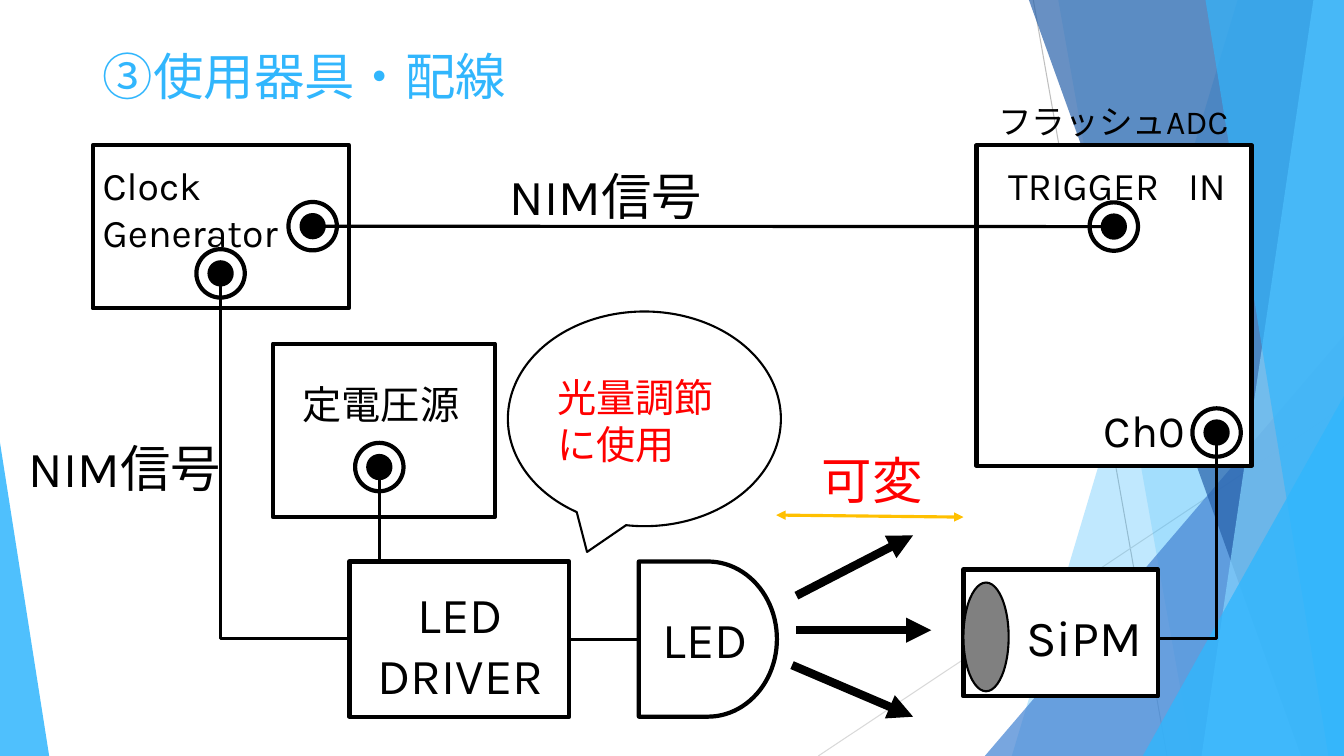
from dataclasses import dataclass

from lxml import etree
from pptx import Presentation
from pptx import util as u
from pptx.dml.color import RGBColor
from pptx.enum import lang, shapes, text
from pptx.oxml import ns


@dataclass(frozen=True)
class Theme:
    font: str = "Karla"
    ink: str = "000000"
    paper: str = "FFFFFF"
    accent: str = "31B6FD"
    sky: str = "83D3FE"
    blue: str = "4584D3"
    navy: str = "2862AA"
    alert: str = "FF0000"
    amber: str = "FFC000"
    grey: str = "808080"
    hairlines: tuple = ("BFBFBF", "D9D9D9")
    large: int = 36
    channel: int = 32
    medium: int = 28
    small: int = 24


@dataclass(frozen=True)
class Box:
    left: float
    top: float
    width: float
    height: float

    def point(self, x, y):
        return self.left + x, self.top + y

    def inside(self, x, y, width, height):
        return Box(*self.point(x, y), width, height)

    def lengths(self):
        return [u.Cm(value) for value in (self.left, self.top, self.width, self.height)]


theme = Theme()
preset = shapes.MSO_SHAPE
align = text.PP_ALIGN


def write(frame, words, size=theme.large, colour=theme.ink, alignment=align.LEFT, space=0):
    frame.word_wrap = True
    frame.auto_size = text.MSO_AUTO_SIZE.NONE
    frame.vertical_anchor = text.MSO_ANCHOR.TOP
    paragraph = frame.paragraphs[0]
    paragraph.alignment = alignment
    for part in words.partition(" ") if space else [words]:
        run = paragraph.add_run()
        run.text = part
        run.font.name = theme.font
        run.font.size = u.Pt(size)
        run.font.color.rgb = RGBColor.from_string(colour)
        run.font.language_id = lang.MSO_LANGUAGE_ID.JAPANESE
        properties = run.font._element
        etree.SubElement(properties, ns.qn("a:ea"), typeface=theme.font)
        if part == " ":
            properties.set("spc", str(space * 100))


def label(slide, box, words, **style):
    write(slide.shapes.add_textbox(*box.lengths()).text_frame, words, **style)


def paint(shape, fill=None, line=None, weight=3, opacity=100):
    shape.shadow.inherit = False
    if fill:
        shape.fill.solid()
        shape.fill.fore_color.rgb = RGBColor.from_string(fill)
        if opacity < 100:
            colour = shape._element.spPr.find(".//" + ns.qn("a:srgbClr"))
            etree.SubElement(colour, ns.qn("a:alpha"), val=str(opacity * 1000))
    else:
        shape.fill.background()
    if line:
        shape.line.color.rgb = RGBColor.from_string(line)
        shape.line.width = u.Pt(weight)
    else:
        shape.line.fill.background()
    return shape


def outline(slide, kind, box, fill=theme.paper, weight=3):
    return paint(slide.shapes.add_shape(kind, *box.lengths()), fill, theme.ink, weight)


def wire(slide, start, end, colour=theme.ink, weight=2.25, arrows=(), corner=False):
    kind = shapes.MSO_CONNECTOR.ELBOW if corner else shapes.MSO_CONNECTOR.STRAIGHT
    connector = slide.shapes.add_connector(kind, *[u.Cm(value) for value in (*start, *end)])
    connector.line.color.rgb = RGBColor.from_string(colour)
    connector.line.width = u.Pt(weight)
    properties = connector._element.spPr
    for arrow in arrows:
        etree.SubElement(connector.line._get_or_add_ln(), ns.qn("a:" + arrow), type="triangle")
    etree.SubElement(properties, ns.qn("a:effectLst"))
    if corner:
        guides = properties.find(".//" + ns.qn("a:avLst"))
        etree.SubElement(guides, ns.qn("a:gd"), name="adj1", fmla="val 0")
    return connector


def socket(slide, centre):
    for diameter, fill, weight in ((1.22, None, 3), (0.61, theme.ink, 1.5)):
        left, top = (value - diameter / 2 for value in centre)
        outline(slide, preset.OVAL, Box(left, top, diameter, diameter), fill, weight)
    return centre


def backdrop(slide, box):
    def facet(top, bottom, colour, opacity):
        x, y = box.point(0, 0)
        right, floor = u.Cm(x + box.width), u.Cm(y + box.height)
        builder = slide.shapes.build_freeform(u.Cm(x + top), u.Cm(y))
        builder.add_line_segments([(right, u.Cm(y)), (right, floor), (u.Cm(x + bottom), floor)])
        paint(builder.convert_to_shape(), colour, opacity=opacity)

    def triangle(left, width, height, peak, colour, opacity):
        place = box.inside(left, box.height - height, width, height)
        shape = slide.shapes.add_shape(preset.ISOSCELES_TRIANGLE, *place.lengths())
        shape.adjustments[0] = peak
        paint(shape, colour, opacity=opacity)

    rays = ((26.04, 0, 29.41, 19.05), (33.87, 10.24, 20.62, 19.05))
    for colour, (x1, y1, x2, y2) in zip(theme.hairlines, rays):
        wire(slide, box.point(x1, y1), box.point(x2, y2), colour, 0.75)
    facet(31.19, 25.5, theme.accent, 30)
    facet(26.67, 30.05, theme.accent, 20)
    triangle(24.82, 9.05, 10.59, 1, theme.blue, 72)
    facet(25.93, 32.79, theme.navy, 70)
    facet(33.1, 30.28, theme.sky, 70)
    facet(30.38, 33.48, theme.accent, 65)
    triangle(28.8, 5.07, 9.07, 1, theme.accent, 80)
    triangle(0, 1.24, 7.9, 0, theme.accent, 85)


def heading(slide, box):
    title = slide.shapes.title
    title.left, title.top, title.width, title.height = box.lengths()
    write(title.text_frame, "③使用器具・配線", colour=theme.accent)


def clock_generator(slide, box):
    outline(slide, preset.RECTANGLE, box)
    sockets = [socket(slide, box.point(*centre)) for centre in ((5.54, 2.04), (3.22, 3.23))]
    label(slide, box.inside(0, 0.28, 4.93, 2.64), "Clock Generator", size=theme.medium)
    return sockets


def flash_adc(slide, box):
    outline(slide, preset.RECTANGLE, box)
    sockets = [socket(slide, box.point(*centre)) for centre in ((3.46, 2.05), (6.05, 7.24))]
    label(slide, box.inside(0.43, 0.28, 6.22, 1.45), "TRIGGER IN",
          size=theme.medium, alignment=align.CENTER, space=14)
    label(slide, box.inside(2.7, 6.37, 3.05, 1.63), "Ch0",
          size=theme.channel, alignment=align.CENTER)
    label(slide, box.inside(0.18, -1.25, 6.53, 1.27), "フラッシュADC",
          size=theme.small, alignment=align.CENTER)
    return sockets


def power_supply(slide, box):
    outline(slide, preset.RECTANGLE, box)
    label(slide, box.inside(0.28, 0.79, 4.88, 1.45), "定電圧源",
          size=theme.medium, alignment=align.CENTER)
    return socket(slide, box.point(2.68, 3.11))


def led_driver(slide, box):
    shape = outline(slide, preset.RECTANGLE, box)
    label(slide, box.inside(0.28, 0.43, 5.03, 3.33), "LED DRIVER", alignment=align.CENTER)
    return shape


def led(slide, box):
    shape = outline(slide, preset.FLOWCHART_DELAY, box)
    label(slide, box.inside(0.16, 1.04, 3.02, 1.8), "LED", alignment=align.CENTER)
    rays = ((3.97, 0.86, 6.91, -0.66), (3.97, 1.73, 7.37, 1.73), (3.86, 2.61, 6.91, 3.91))
    for x1, y1, x2, y2 in rays:
        wire(slide, box.point(x1, y1), box.point(x2, y2), weight=6, arrows=["tailEnd"])
    return shape


def photosensor(slide, box):
    outline(slide, preset.RECTANGLE, box)
    outline(slide, preset.OVAL, box.inside(0, 0.33, 1.14, 2.74), theme.grey, 1.5)
    label(slide, box.inside(1.17, 0.81, 3.76, 1.8), "SiPM", alignment=align.CENTER)


def brightness_note(slide, box):
    callout = outline(slide, preset.OVAL_CALLOUT, box, weight=1.5)
    callout.adjustments[0], callout.adjustments[1] = -0.21, 0.62
    label(slide, box.inside(0.99, 1.42, 5.31, 2.64), "光量調節に使用",
          size=theme.medium, colour=theme.alert)


def variable_distance(slide, box):
    wire(slide, box.point(0, 1.78), box.point(box.width, 1.83), theme.amber,
         arrows=["headEnd", "tailEnd"])
    label(slide, box.inside(0.4, 0, 4.04, 1.8), "可変",
          colour=theme.alert, alignment=align.CENTER)


def wiring_slide(presentation, box):
    slide = presentation.slides.add_slide(presentation.slide_layouts[5])
    backdrop(slide, box)
    heading(slide, box.inside(2.34, 1.02, 29.21, 2.64))
    clock_right, clock_bottom = clock_generator(slide, box.inside(2.34, 3.66, 6.45, 4.11))
    trigger, channel = flash_adc(slide, box.inside(24.61, 3.66, 6.93, 8.08))
    supply = power_supply(slide, box.inside(6.88, 8.66, 5.59, 4.37))
    driver_box = box.inside(8.81, 14.15, 5.54, 3.91)
    driver = led_driver(slide, driver_box)
    lamp_box = box.inside(16.1, 14.15, 3.48, 3.91)
    lamp = led(slide, lamp_box)
    sensor_box = box.inside(24.28, 14.35, 4.9, 3.2)
    photosensor(slide, sensor_box)
    brightness_note(slide, box.inside(12.8, 7.85, 6.88, 5.41))
    variable_distance(slide, box.inside(19.56, 11.2, 4.72, 1.83))

    wire(slide, clock_right, trigger)
    wire(slide, clock_bottom, driver_box.point(0, 1.95), corner=True)
    wire(slide, supply, (supply[0], driver_box.top))
    wire(slide, channel, sensor_box.point(sensor_box.width, 1.75), corner=True)
    feed = wire(slide, driver_box.point(5.54, 1.95), lamp_box.point(0, 1.95))
    feed.begin_connect(driver, 3)
    feed.end_connect(lamp, 1)
    for left, top in ((12.6, 4.04), (0.48, 10.9)):
        label(slide, box.inside(left, top, 5.84, 1.8), "NIM信号")


def main():
    presentation = Presentation()
    page = Box(0, 0, 33.87, 19.05)
    presentation.slide_width, presentation.slide_height = page.lengths()[2:]
    wiring_slide(presentation, page)
    presentation.save("out.pptx")


if __name__ == "__main__":
    main()
